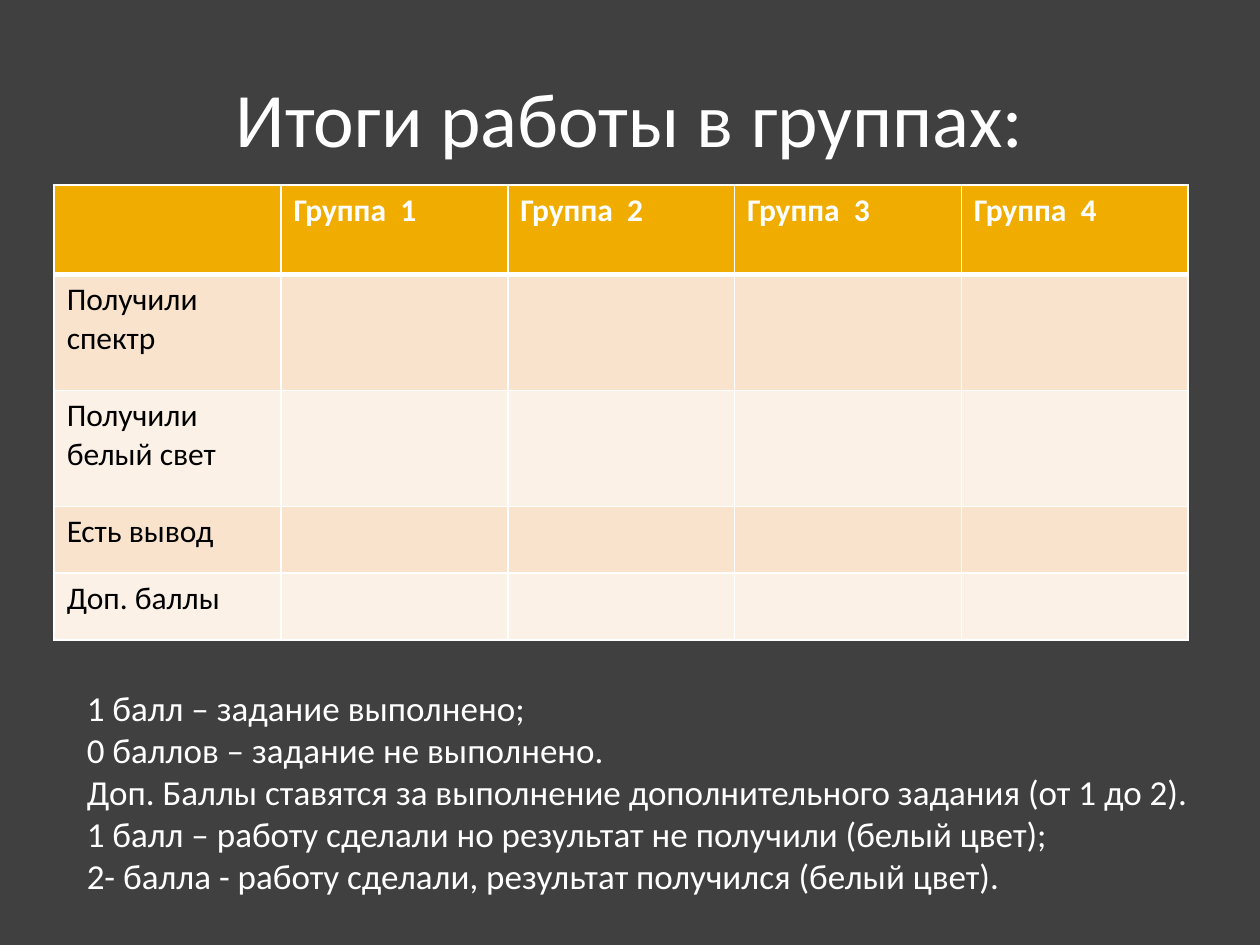
"""Build a slide with a table of group results and the scoring rules."""
from dataclasses import dataclass

from lxml import etree
from pptx import Presentation
from pptx.dml.color import RGBColor
from pptx.enum import text
from pptx.oxml import ns
from pptx.util import Inches, Pt


@dataclass(frozen=True)
class Theme:
    font: str = "Calibri"
    back: str = "404040"
    light: str = "FFFFFF"
    dark: str = "000000"
    header: str = "F0AD00"
    bands: tuple = ("F9E3CC", "FCF1E7")
    title: int = 44
    body: int = 20
    cell: int = 18


theme = Theme()


def style(p, size, color, bold=False):
    for r in p.runs:
        for name, value in {"name": theme.font, "size": Pt(size), "bold": bold}.items():
            setattr(r.font, name, value)
        r.font.color.rgb = RGBColor.from_string(color)


def border(cell, side, width):
    ln = etree.SubElement(cell._tc.get_or_add_tcPr(), ns.qn(f"a:ln{side}"), w=str(Pt(width)))
    fill = etree.SubElement(ln, ns.qn("a:solidFill"))
    etree.SubElement(fill, ns.qn("a:srgbClr"), val=theme.light)


prs = Presentation()
prs.slide_width, prs.slide_height = Inches(10), Inches(7.5)
s = prs.slides.add_slide(prs.slide_layouts[5])
s.background.fill.solid()
s.background.fill.fore_color.rgb = RGBColor.from_string(theme.back)

title = s.shapes.title
place = {"left": 0.5, "top": 0.3, "width": 9, "height": 1.25}
for name, value in place.items():
    setattr(title, name, Inches(value))
tf = title.text_frame
tf.text = "Итоги работы в группах:"
tf.vertical_anchor = text.MSO_ANCHOR.MIDDLE
tf.paragraphs[0].alignment = text.PP_ALIGN.CENTER
style(tf.paragraphs[0], theme.title, theme.light)

groups = [f"Группа  {n}" for n in range(1, 5)]
criteria = ["Получили  спектр", "Получили белый свет", "Есть вывод", "Доп. баллы"]
rows = [["", *groups]] + [[name] + [""] * len(groups) for name in criteria]
heights = [0.71, 0.92, 0.92, 0.53, 0.53]
table = s.shapes.add_table(
    len(rows), len(rows[0]), Inches(0.43), Inches(1.47), Inches(9), Inches(sum(heights))
).table
for i, (row, height) in enumerate(zip(rows, heights)):
    table.rows[i].height = Inches(height)
    is_header = i == 0
    for j, label in enumerate(row):
        cell = table.cell(i, j)
        cell.text = label
        style(cell.text_frame.paragraphs[0], theme.cell,
              theme.light if is_header else theme.dark, is_header)
        widths = {"L": 1, "R": 1, "T": 3 if i == 1 else 1, "B": 3 if is_header else 1}
        for side, width in widths.items():
            border(cell, side, width)
        cell.fill.solid()
        cell.fill.fore_color.rgb = RGBColor.from_string(
            theme.header if is_header else theme.bands[(i - 1) % 2])

rules = [
    "1 балл – задание выполнено;",
    "0 баллов – задание не выполнено.",
    "Доп. Баллы ставятся за выполнение дополнительного задания (от 1 до 2).",
    "1 балл – работу сделали но результат не получили (белый цвет);",
    "2- балла - работу сделали, результат получился (белый цвет).",
]
tf = s.shapes.add_textbox(Inches(0.59), Inches(5.4), Inches(8.98), Inches(1.78)).text_frame
tf.word_wrap = True
tf.auto_size = text.MSO_AUTO_SIZE.SHAPE_TO_FIT_TEXT
tf.text = "\n".join(rules)
for p in tf.paragraphs:
    style(p, theme.body, theme.light)

prs.save("out.pptx")
